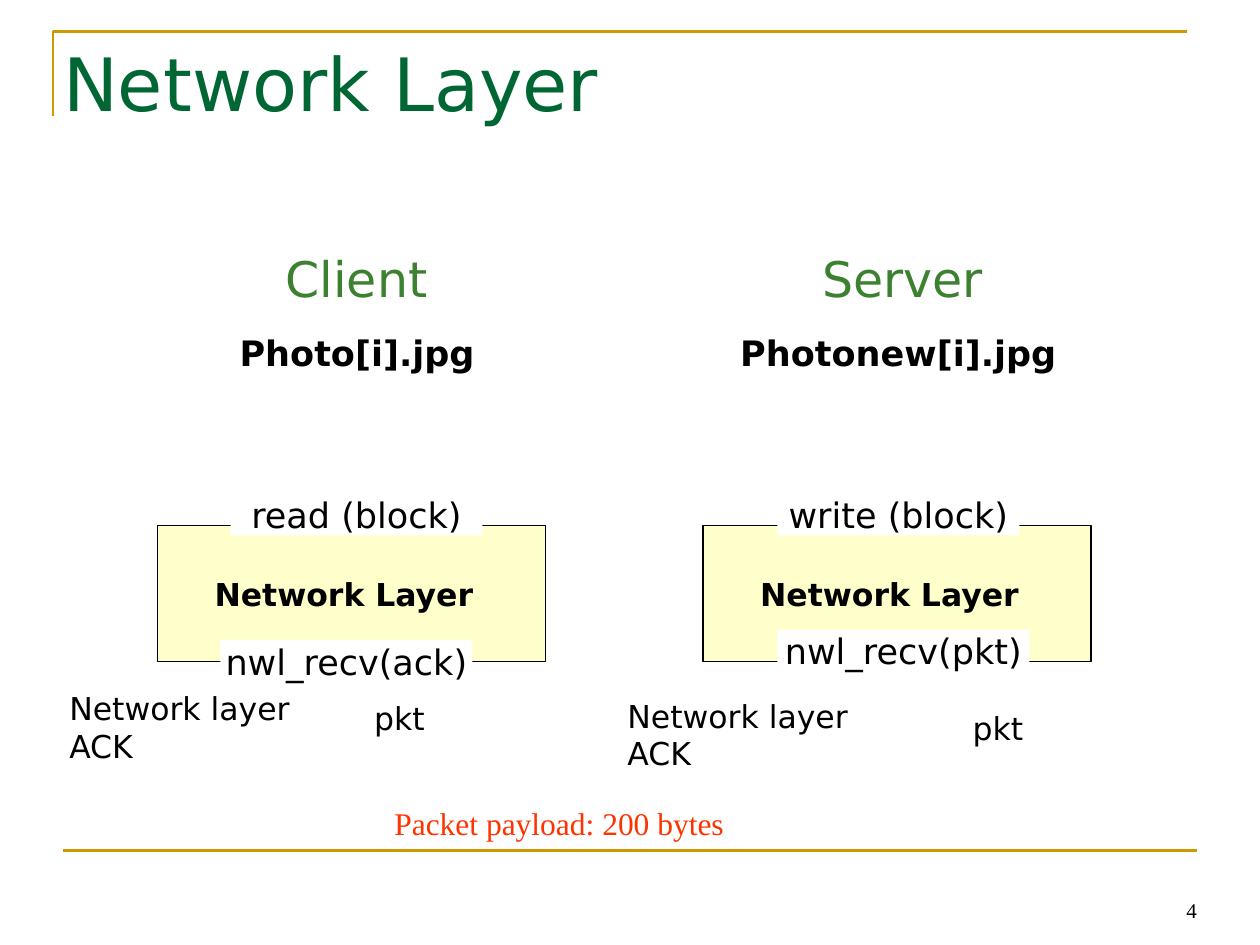
from lxml import etree
from pptx import Presentation
from pptx.dml.color import RGBColor
from pptx.enum.shapes import MSO_CONNECTOR, MSO_SHAPE
from pptx.enum.text import MSO_ANCHOR as Anchor, MSO_AUTO_SIZE as AutoSize, PP_ALIGN as Align
from pptx.oxml.ns import qn
from pptx.util import Inches, Pt

COLORS = {
    "rule": "CC9900", "title": "006633", "heading": "3B812F", "layer": "FFFFCC",
    "text": "000000", "label": "FFFFFF", "payload": "FF3300",
}
SANS, SERIF = "DejaVu Sans", "Times New Roman"


def color(name):
    return RGBColor.from_string(COLORS[name])


def write_text(shape, text, size=18, font=SANS, ink="text", bold=False, align=Align.LEFT,
               anchor=Anchor.TOP, before=0, margin=0.05, wrap=True):
    frame = shape.text_frame
    frame.auto_size = AutoSize.NONE
    frame.word_wrap = wrap
    frame.vertical_anchor = anchor
    frame.margin_left = frame.margin_right = Inches(margin)
    frame.margin_top = frame.margin_bottom = Inches(margin)
    paragraph = frame.paragraphs[0]
    paragraph.alignment = align
    paragraph.space_before = Pt(before)
    run = paragraph.add_run()
    run.text = text
    run.font.name = font
    run.font.size = Pt(size)
    run.font.bold = bold
    run.font.color.rgb = color(ink)


class LayerSlide:
    def __init__(self, slide):
        self.slide = slide
        self.shapes = slide.shapes

    def title(self, text, left, top, width, height):
        title = self.shapes.title
        title.left, title.top = Inches(left), Inches(top)
        title.width, title.height = Inches(width), Inches(height)
        write_text(title, text, size=42, ink="title", margin=0)

    def text(self, text, left, top, width, height, **text_format):
        box = self.shapes.add_textbox(*map(Inches, (left, top, width, height)))
        write_text(box, text, **text_format)

    def box(self, left, top, width, height, fill, line=None):
        shape = self.shapes.add_shape(
            MSO_SHAPE.RECTANGLE, *map(Inches, (left, top, width, height)))
        shape.shadow.inherit = False
        shape.fill.solid()
        shape.fill.fore_color.rgb = color(fill)
        if line:
            shape.line.color.rgb = color(line)
            shape.line.width = Pt(0.75)
        else:
            shape.line.fill.background()
        return shape

    def call_label(self, text, left, top, width):
        label = self.box(left, top, width, 0.33, "label")
        write_text(label, text, size=20, align=Align.CENTER, before=12, margin=0)

    def rule(self, start, end):
        line = self.shapes.add_connector(MSO_CONNECTOR.STRAIGHT, *map(Inches, start + end))
        line.line.color.rgb = color("rule")
        line.line.width = Pt(1.5)
        etree.SubElement(line.element.spPr, qn("a:effectLst"))

    def corner(self, *points):
        """Draw an open, unfilled line through the points."""
        first, *others = [tuple(map(Inches, point)) for point in points]
        builder = self.shapes.build_freeform(*first)
        builder.add_line_segments(others, close=False)
        shape = builder.convert_to_shape()
        shape.shadow.inherit = False
        shape.fill.background()
        shape.line.color.rgb = color("rule")
        shape.line.width = Pt(1.5)

    def host(self, left, heading, photo, send, receive, ack, packet):
        """Draw one host column; each part is (text, left, top, width)."""
        name, *place = heading
        self.text(name, *place, 0.57, size=28, ink="heading", align=Align.CENTER, before=16)
        name, *place = photo
        self.text(name, *place, 0.43, size=20, bold=True, align=Align.CENTER, before=12)
        self.box(left, 4.17, 3.08, 1.08, "layer", line="text")
        self.text("Network Layer", left + 0.45, 4.51, 2.06, 0.41, bold=True,
                  align=Align.CENTER, anchor=Anchor.MIDDLE, margin=0, wrap=False)
        self.call_label(*send)
        self.call_label(*receive)
        for (name, *place), height in ((ack, 0.71), (packet, 0.41)):
            self.text(name, *place, height, before=10)


def main():
    presentation = Presentation()
    presentation.slide_width, presentation.slide_height = Inches(10), Inches(7.5)
    title_only = presentation.slide_layouts[5]
    page = LayerSlide(presentation.slides.add_slide(title_only))

    page.corner((0.42, 0.92), (0.42, 0.25), (9.42, 0.25))
    page.rule((0.5, 6.75), (9.5, 6.75))
    page.title("Network Layer", 0.5, 0.3, 9, 1.25)
    page.host(
        1.25,
        heading=("Client", 1.83, 1.92, 2),
        photo=("Photo[i].jpg", 1.17, 2.58, 3.33),
        send=("read (block)", 1.83, 3.92, 2),
        receive=("nwl_recv(ack)", 1.75, 5.08, 2),
        ack=("Network layer ACK", 0.5, 5.42, 2),
        packet=("pkt", 2.92, 5.5, 0.83),
    )
    page.host(
        5.58,
        heading=("Server", 6.33, 1.92, 1.67),
        photo=("Photonew[i].jpg", 5.42, 2.58, 3.42),
        send=("write (block)", 6.17, 3.92, 1.92),
        receive=("nwl_recv(pkt)", 6.17, 5, 2),
        ack=("Network layer ACK", 4.93, 5.48, 2),
        packet=("pkt", 7.67, 5.58, 0.83),
    )
    page.text("Packet payload: 200 bytes", 3.08, 6.33, 2.73, 0.42,
              font=SERIF, ink="payload", wrap=False)
    page.text("4", 7.17, 7.03, 2.33, 0.29, size=12, font=SERIF,
              align=Align.RIGHT, anchor=Anchor.BOTTOM, margin=0)

    presentation.save("out.pptx")


if __name__ == "__main__":
    main()
